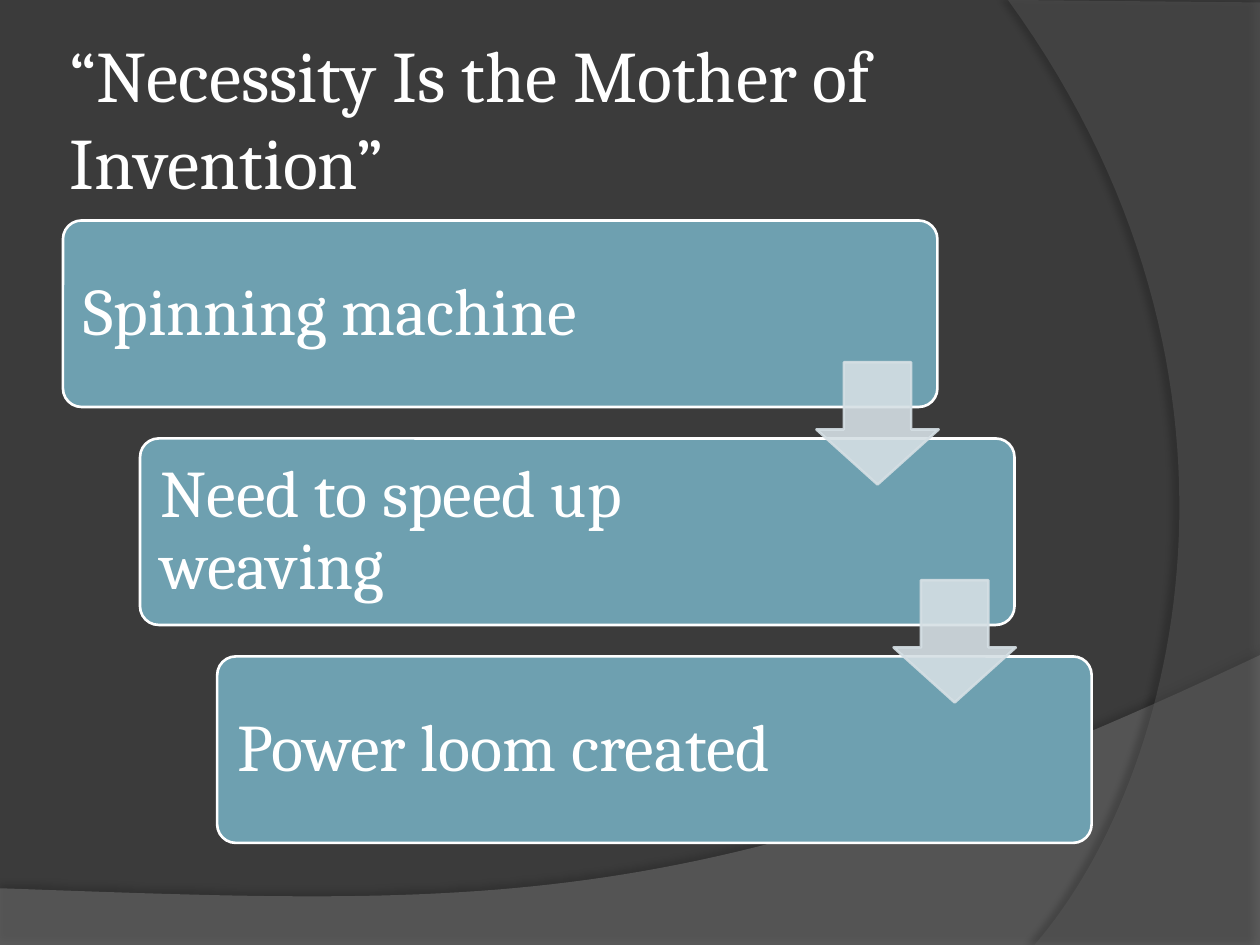
from dataclasses import dataclass

from lxml import etree
from pptx import Presentation
from pptx.dml.color import RGBColor
from pptx.enum.shapes import MSO_SHAPE
from pptx.enum.text import MSO_ANCHOR, PP_ALIGN
from pptx.oxml.ns import qn
from pptx.util import Inches, Pt

CARD = MSO_SHAPE.ROUNDED_RECTANGLE
ARROW = MSO_SHAPE.DOWN_ARROW
MIDDLE = MSO_ANCHOR.MIDDLE
LEFT = PP_ALIGN.LEFT

# The grid has 100 columns and 75 rows
COLUMNS, ROWS = 100, 75
WIDTH, HEIGHT = Inches(10), Inches(7.5)


@dataclass(frozen=True)
class Theme:
    font: str = "Cambria"
    background: str = "3B3B3B"
    lower_wave: str = "7F7F7F"
    right_wave: str = "5E5E5E"
    shadow: str = "000000"
    text: str = "FFFFFF"
    card: str = "6EA0B0"
    arrow: str = "D5DFE4"
    title_size: float = 41.4
    card_size: float = 38
    outline: float = 1.5


def bezier(start, control1, control2, end, steps=60):
    """Points along a cubic curve, without its start."""
    for step in range(1, steps + 1):
        t = step / steps
        u = 1 - t
        weights = (u**3, 3 * u * u * t, 3 * u * t * t, t**3)
        yield tuple(
            sum(w * p for w, p in zip(weights, axis))
            for axis in zip(start, control1, control2, end)
        )


class SlideBuilder:
    def __init__(self, slide, theme):
        self.slide = slide
        self.theme = theme
        self.paint(slide.background.fill, theme.background)

    def place(self, column, row):
        return round(column * WIDTH / COLUMNS), round(row * HEIGHT / ROWS)

    def paint(self, fill, color, opacity=100):
        fill.solid()
        fill.fore_color.rgb = RGBColor.from_string(color)
        if opacity < 100:
            for node in fill._xPr.iter(qn("a:srgbClr")):
                etree.SubElement(node, qn("a:alpha"), val=str(opacity * 1000))

    def set_text(self, frame, text, size, insets, spacing=1.0):
        frame.word_wrap = True
        frame.vertical_anchor = MIDDLE
        (frame.margin_left, frame.margin_top,
         frame.margin_right, frame.margin_bottom) = map(Inches, insets)
        frame.text = text
        paragraph = frame.paragraphs[0]
        paragraph.alignment = LEFT
        paragraph.line_spacing = spacing
        font = paragraph.runs[0].font
        font.name = self.theme.font
        font.size = Pt(size)
        font.color.rgb = RGBColor.from_string(self.theme.text)

    def wave(self, points, color, opacity, shadow_opacity, distance, angle):
        outline = [self.place(*point) for point in points]
        builder = self.slide.shapes.build_freeform(*outline[0], scale=1.0)
        builder.add_line_segments(outline[1:], close=True)
        wave = builder.convert_to_shape()
        self.paint(wave.fill, color, opacity)
        wave.line.fill.background()
        wave.shadow.inherit = False
        effects = wave._element.spPr.find(qn("a:effectLst"))
        shadow = etree.SubElement(
            effects, qn("a:outerShdw"), blurRad=str(Pt(4)),
            dist=str(Pt(distance)), dir=str(angle * 60000),
            algn="ctr", rotWithShape="0")
        tint = etree.SubElement(shadow, qn("a:srgbClr"), val=self.theme.shadow)
        etree.SubElement(tint, qn("a:alpha"), val=str(shadow_opacity * 1000))

    def title(self, text, column, row, width, height):
        box = self.slide.shapes.add_textbox(
            *self.place(column, row), *self.place(width, height))
        self.set_text(box.text_frame, text, self.theme.title_size, [0.05] * 4)

    def block(self, preset, adjustments, area, color, edge, opacity=100):
        column, row, width, height = area
        block = self.slide.shapes.add_shape(
            preset, *self.place(column, row), *self.place(width, height))
        for index, value in enumerate(adjustments):
            block.adjustments[index] = value
        block.shadow.inherit = False
        self.paint(block.fill, color, opacity)
        self.paint(block.line.fill, edge, opacity)
        block.line.width = Pt(self.theme.outline)
        return block

    def card(self, text, area):
        card = self.block(CARD, [0.1], area, self.theme.card, self.theme.text)
        # The wide right inset keeps the text clear of the arrows
        self.set_text(card.text_frame, text, self.theme.card_size,
                      (0.12, 0.12, 1.7, 0.12), 0.9)

    def arrow(self, area):
        self.block(ARROW, [0.55, 0.45], area,
                   self.theme.arrow, self.theme.arrow, 90)


def main():
    theme = Theme()
    deck = Presentation()
    deck.slide_width, deck.slide_height = WIDTH, HEIGHT
    page = SlideBuilder(deck.slides.add_slide(deck.slide_layouts[6]), theme)

    # Background waves
    lower = [(0, 70.5), (0, 75), (100, 75), (100, 52)]
    lower += bezier((100, 52), (55.9, 72.9), (39.1, 71.9), (0, 70.5))
    page.wave(lower, theme.lower_wave, 45, 35, 3.5, 270)
    right = [(100, 0.2), (100, 75), (82.1, 75)]
    right += bezier((82.1, 75), (93.5, 61.9), (101.8, 30), (80, 0))
    page.wave(right, theme.right_wave, 40, 45, 4, 180)

    page.title("“Necessity Is the Mother of Invention”", 5, 3, 81.7, 12.5)

    # Staircase of steps, then the arrows that join them
    steps = ["Spinning machine", "Need to speed up weaving",
             "Power loom created"]
    shift, drop = 6.12, 17.3
    for index, step in enumerate(steps):
        page.card(step, (5 + index * shift, 17.5 + index * drop, 69.4, 14.8))
    for index in range(len(steps) - 1):
        page.arrow((64.8 + index * shift, 28.75 + index * drop, 9.7, 9.7))

    deck.save("out.pptx")


if __name__ == "__main__":
    main()
